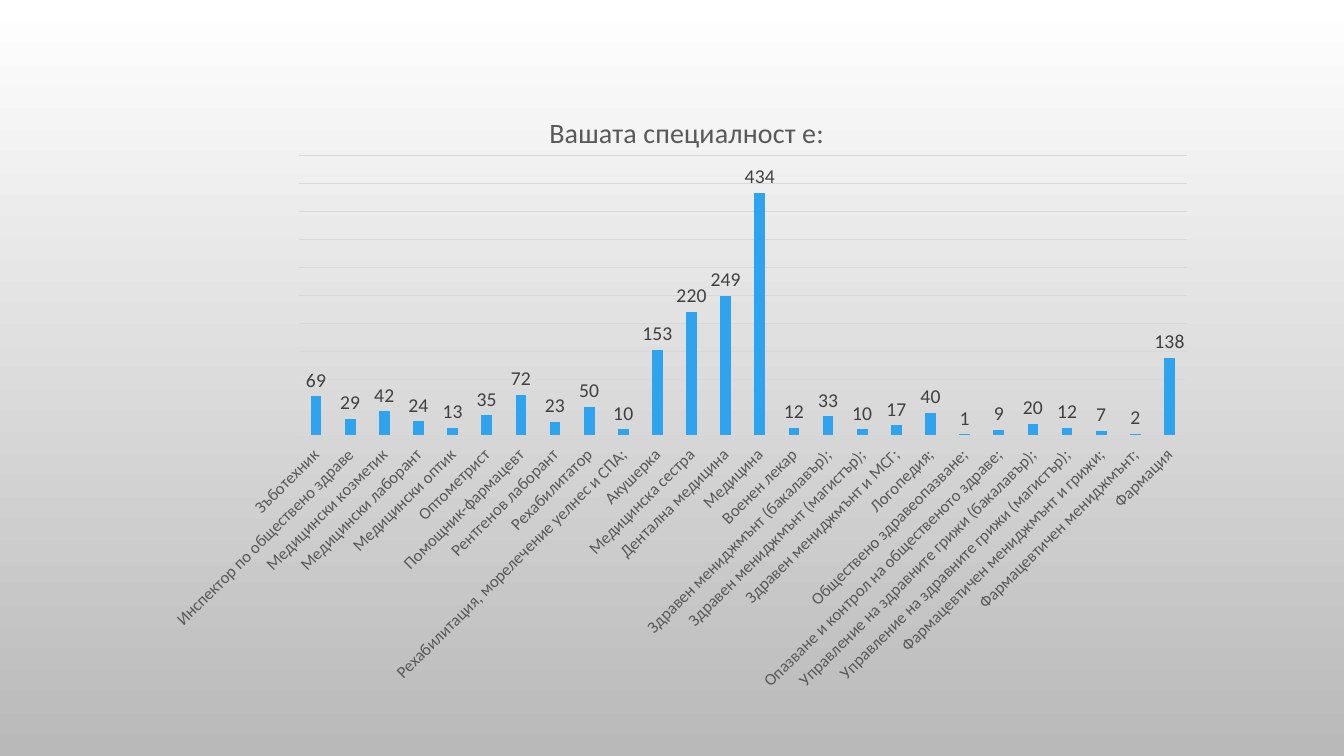
from lxml.etree import SubElement
from pptx import Presentation
from pptx.chart.data import CategoryChartData
from pptx.dml.color import RGBColor
from pptx.enum.chart import XL_CHART_TYPE as ChartType, XL_LABEL_POSITION as LabelPosition
from pptx.enum.chart import XL_TICK_LABEL_POSITION as TickLabels, XL_TICK_MARK as TickMark
from pptx.oxml.ns import qn
from pptx.oxml import parse_xml
from pptx.util import Inches, Pt


def style(font, size, color):
    font.name = "Calibri"
    font.size = Pt(size)
    font.bold = False
    font.color.rgb = RGBColor.from_string(color)


def arrange(parent, index, **shares):
    for old in parent.findall(qn("c:layout")):
        parent.remove(old)
    layout = parse_xml(
        '<c:layout xmlns:c="http://schemas.openxmlformats.org/drawingml/2006/chart"/>'
    )
    parent.insert(index, layout)
    manual = SubElement(layout, qn("c:manualLayout"))
    for key, value in shares.items():
        SubElement(manual, qn(f"c:{key}")).set("val", str(value))


specialties = {
    "Зъботехник": 69,
    "Инспектор по обществено здраве": 29,
    "Медицински козметик": 42,
    "Медицински лаборант": 24,
    "Медицински оптик": 13,
    "Оптометрист": 35,
    "Помощник-фармацевт": 72,
    "Рентгенов лаборант": 23,
    "Рехабилитатор": 50,
    "Рехабилитация, морелечение уелнес и СПА;": 10,
    "Акушерка": 153,
    "Медицинска сестра": 220,
    "Дентална медицина": 249,
    "Медицина": 434,
    "Военен лекар": 12,
    "Здравен мениджмънт (бакалавър);": 33,
    "Здравен мениджмънт (магистър);": 10,
    "Здравен мениджмънт и МСГ;": 17,
    "Логопедия;": 40,
    "Обществено здравеопазване;": 1,
    "Опазване и контрол на общественото здраве;": 9,
    "Управление на здравните грижи (бакалавър);": 20,
    "Управление на здравните грижи (магистър);": 12,
    "Фармацевтичен мениджмънт и грижи;": 7,
    "Фармацевтичен мениджмънт;": 2,
    "Фармация": 138,
}

deck = Presentation()
deck.slide_width = Inches(13.33)
deck.slide_height = Inches(7.5)
page = deck.slides.add_slide(deck.slide_layouts[6])

backdrop = page.background.fill
backdrop.gradient()
backdrop.gradient_angle = 270
for stop, color in zip(backdrop.gradient_stops, ("FFFFFF", "B9B9B9")):
    stop.color.rgb = RGBColor.from_string(color)

data = CategoryChartData()
data.categories = list(specialties)
data.add_series("Series 1", list(specialties.values()))
chart = page.shapes.add_chart(
    ChartType.COLUMN_CLUSTERED,
    Inches(1.52), Inches(0.82), Inches(10.48), Inches(6.11), data,
).chart
style(chart.font, 10, "000000")
chart.has_legend = False

chart.has_title = True
para = chart.chart_title.text_frame.paragraphs[0]
span = para.add_run()
span.text = "Вашата специалност е:"
style(span.font, 20, "595959")

plot = chart.plots[0]
plot.gap_width = 219
plot.overlap = -27
plot.vary_by_categories = False
columns = plot.series[0]
columns.format.fill.solid()
columns.format.fill.fore_color.rgb = RGBColor.from_string("2FA3EE")
columns.invert_if_negative = False
labels = columns.data_labels
labels.show_value = True
labels.position = LabelPosition.OUTSIDE_END
style(labels.font, 14, "404040")

names = chart.category_axis
names.major_tick_mark = TickMark.NONE
names.tick_label_position = TickLabels.LOW
style(names.tick_labels.font, 12, "595959")
names_body = names._element.find(qn("c:txPr")).find(qn("a:bodyPr"))
names_body.set("rot", "-2700000")
names_body.set("vert", "horz")

counts = chart.value_axis
counts.visible = False
counts.minimum_scale = 0
counts.maximum_scale = 500
counts.major_unit = 50
counts.has_major_gridlines = True
for line in (names.format.line, counts.major_gridlines.format.line):
    line.color.rgb = RGBColor.from_string("D9D9D9")
    line.width = Pt(0.75)

chart_root = chart._chartSpace.chart
arrange(chart_root.find(qn("c:title")), 1, xMode="edge", yMode="edge", x=0.37, y=0.04)
arrange(
    chart_root.plotArea, 0, layoutTarget="inner", xMode="edge", yMode="edge",
    x=0.138, y=0.119, w=0.84, h=0.453,
)

deck.save("out.pptx")
